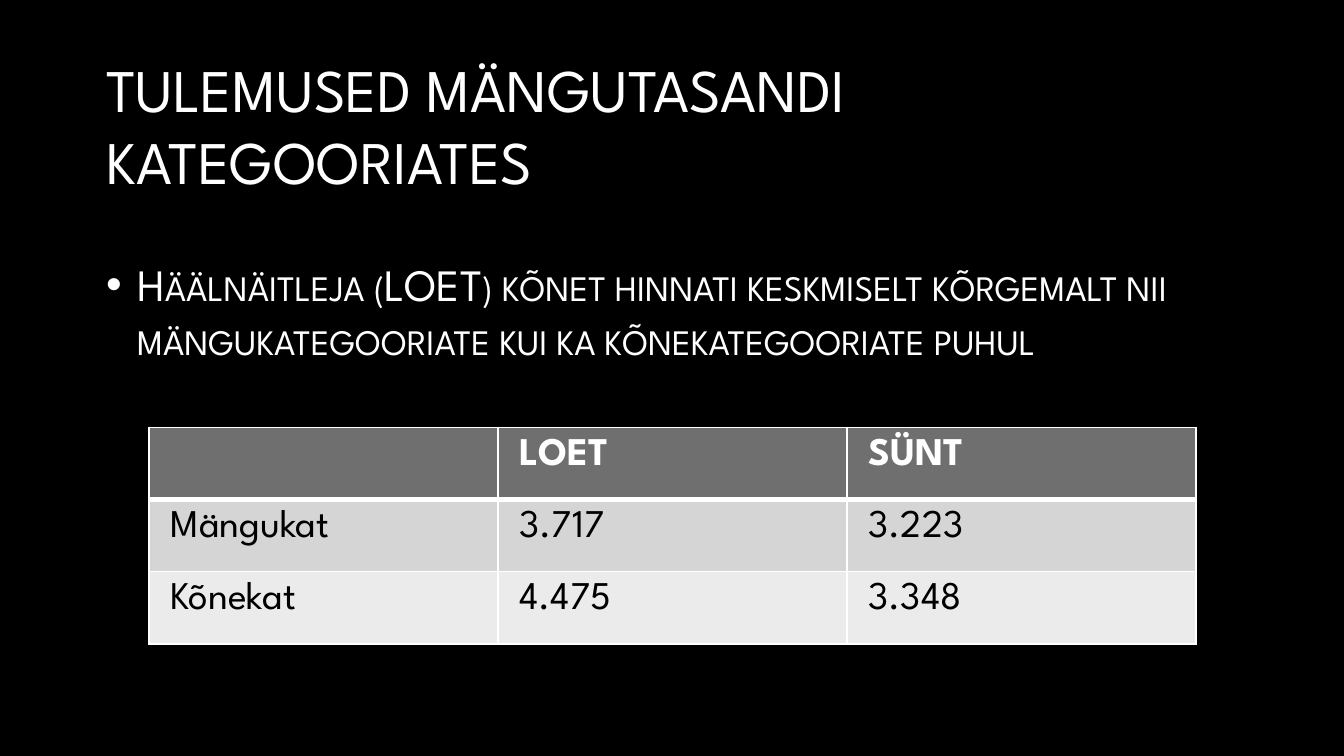
"""Build the slide on results by game level category."""
from lxml.etree import SubElement
from pptx import Presentation
from pptx.dml.color import RGBColor as RGB
from pptx.enum.text import MSO_ANCHOR as Anchor, MSO_AUTO_SIZE as Fit, PP_ALIGN as Align
from pptx.oxml.ns import qn
from pptx.util import Inches, Pt


def style(para, size, color, bold=False):
    """Set the font of one paragraph."""
    font = para.font
    font.name, font.size, font.bold = "League Spartan", Pt(size), bold
    font.color.rgb = RGB.from_string(color)


def edge(cell, side, width):
    """Draw one white cell border."""
    line = SubElement(cell._tc.get_or_add_tcPr(), qn(f"a:ln{side}"), w=str(Pt(width)))
    fill = SubElement(line, qn("a:solidFill"))
    SubElement(fill, qn("a:srgbClr"), val="FFFFFF")


deck = Presentation()
deck.slide_width = Inches(10)
deck.slide_height = Inches(10 * 9 / 16)
slide = deck.slides.add_slide(deck.slide_layouts[1])
back = slide.background.fill
back.solid()
back.fore_color.rgb = RGB.from_string("000000")

title, body = slide.placeholders
texts = [
    (title, 0.51, 0.83, 32.4, "TULEMUSED MÄNGUTASANDI KATEGOORIATES"),
    (body, 1.63, 1.36, 24, "Häälnäitleja (LOET) kõnet hinnati keskmiselt kõrgemalt "
     "nii mängukategooriate kui ka kõnekategooriate puhul"),
]
for box, top, height, size, text in texts:
    box.left, box.top = Inches(0.69), Inches(top)
    box.width, box.height = Inches(8.62), Inches(height)
    frame = box.text_frame
    frame.text = text
    frame.word_wrap, frame.auto_size = True, Fit.NONE
    frame.vertical_anchor = Anchor.MIDDLE
    para = frame.paragraphs[0]
    para.alignment = Align.LEFT
    para.space_before = Pt(0)
    if box is body:
        para.space_after = Pt(4.5)
        props = para._p.get_or_add_pPr()
        props.set("marL", str(Inches(0.23)))
        props.set("indent", str(Inches(-0.23)))
        tint = SubElement(props, qn("a:buClr"))
        SubElement(tint, qn("a:srgbClr"), val="FFFFFF")
        SubElement(props, qn("a:buFont"), typeface="Arial")
        SubElement(props, qn("a:buChar"), char="•")
    style(para, size, "FFFFFF")
props.find(qn("a:defRPr")).set("cap", "small")

rows = [
    ("6F6F6F", "FFFFFF", ["", "LOET", "SÜNT"]),
    ("D5D5D5", "000000", ["Mängukat", "3.717", "3.223"]),
    ("EBEBEB", "000000", ["Kõnekat", "4.475", "3.348"]),
]
grid = slide.shapes.add_table(
    3, 3, Inches(1.11), Inches(3.18), Inches(7.79), Inches(1.61)).table
for r, (shade, ink, words) in enumerate(rows):
    for c, word in enumerate(words):
        cell = grid.cell(r, c)
        cell.text = word
        cell.margin_left = cell.margin_right = Inches(0.16)
        cell.margin_top = cell.margin_bottom = Inches(0.08)
        style(cell.text_frame.paragraphs[0], 21, ink, r == 0)
        for side in "LRTB":
            thick = (r, side) in [(0, "B"), (1, "T")]
            edge(cell, side, 3 if thick else 1)
        cell.fill.solid()
        cell.fill.fore_color.rgb = RGB.from_string(shade)

deck.save("out.pptx")
